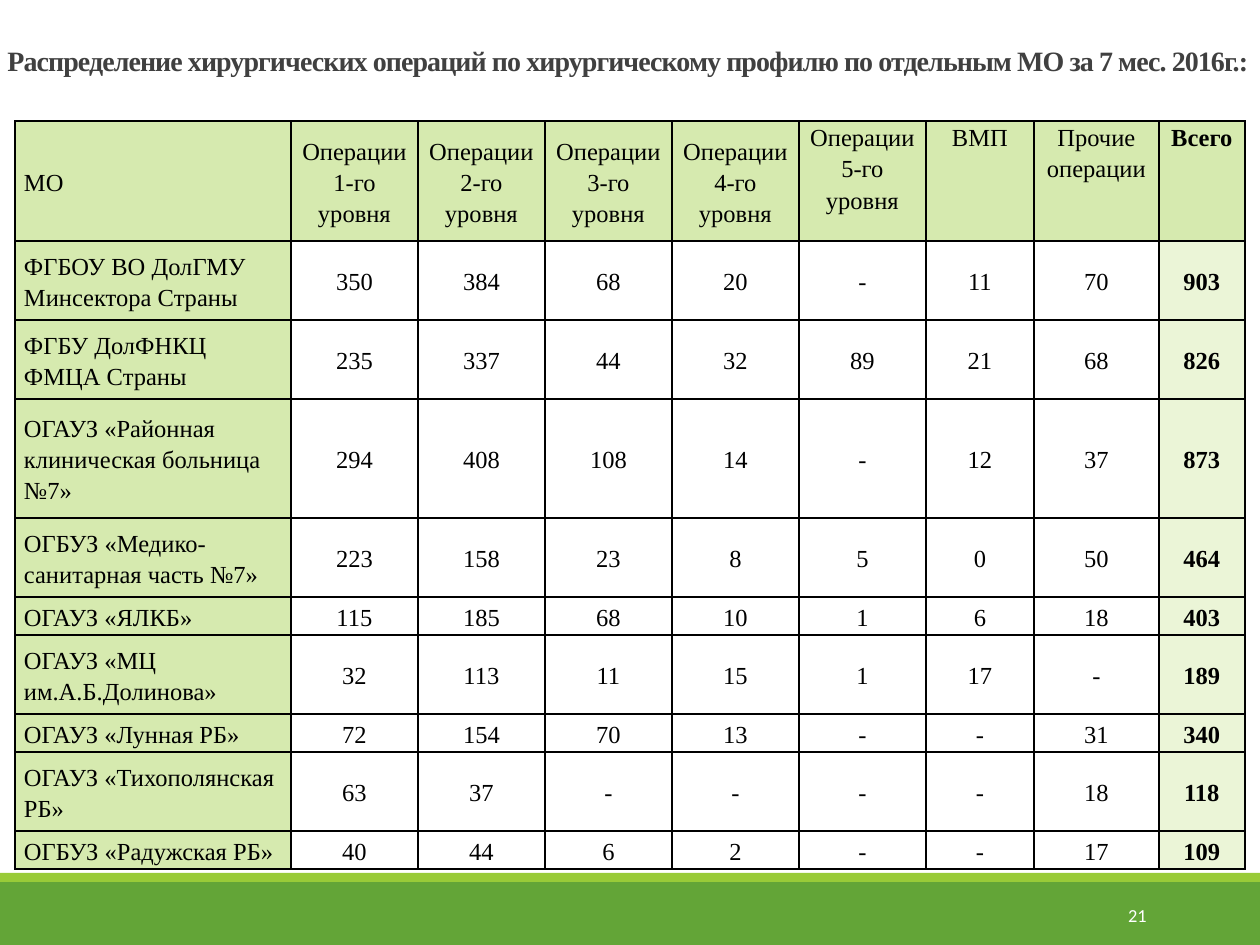
from lxml.etree import SubElement
from pptx import Presentation
from pptx.dml.color import RGBColor
from pptx.enum.shapes import MSO_SHAPE
from pptx.enum.text import MSO_ANCHOR, PP_ALIGN
from pptx.oxml import parse_xml
from pptx.oxml.ns import nsdecls, qn
from pptx.util import Emu, Pt

PX = 914400 // 126
SERIF = "Times New Roman"
COLORS = {
    "band": "63A537",
    "stripe": "99CB38",
    "label": "D6EAAF",
    "total": "EBF5D7",
    "title": "404040",
    "black": "000000",
    "white": "FFFFFF",
}
COLUMN_WIDTHS = [276] + [127] * 5 + [108, 125, 86]
ROW_HEIGHTS = [120, 79, 79, 119, 79, 38, 79, 38, 79, 38]
HEADERS = (["МО"] + [f"Операции {level}-го уровня" for level in range(1, 6)]
           + ["ВМП", "Прочие операции", "Всего"])
HOSPITALS = [
    ("ФГБОУ ВО ДолГМУ Минсектора Страны", "350 384 68 20 - 11 70 903"),
    ("ФГБУ ДолФНКЦ ФМЦА Страны", "235 337 44 32 89 21 68 826"),
    ("ОГАУЗ «Районная клиническая больница №7»", "294 408 108 14 - 12 37 873"),
    ("ОГБУЗ «Медико-санитарная часть №7»", "223 158 23 8 5 0 50 464"),
    ("ОГАУЗ «ЯЛКБ»", "115 185 68 10 1 6 18 403"),
    ("ОГАУЗ «МЦ им.А.Б.Долинова»", "32 113 11 15 1 17 - 189"),
    ("ОГАУЗ «Лунная РБ»", "72 154 70 13 - - 31 340"),
    ("ОГАУЗ «Тихополянская РБ»", "63 37 - - - - 18 118"),
    ("ОГБУЗ «Радужская РБ»", "40 44 6 2 - - 17 109"),
]


def px(value):
    return Emu(value * PX)


def color(name):
    return RGBColor.from_string(COLORS[name])


def add_run(paragraph, text, size, font, color_name, bold=False):
    run = paragraph.add_run()
    run.text = text
    run.font.size = Pt(size)
    run.font.name = font
    run.font.bold = bold
    run.font.color.rgb = color(color_name)
    return run


def add_bar(slide, top, height, color_name):
    shape = slide.shapes.add_shape(MSO_SHAPE.RECTANGLE, 0, px(top), px(1260), px(height))
    shape.shadow.inherit = False
    shape.fill.solid()
    shape.fill.fore_color.rgb = color(color_name)
    shape.line.fill.background()


def add_text(slide, left, top, width, height, text, size, font, color_name,
             align=PP_ALIGN.LEFT, bold=False):
    box = slide.shapes.add_textbox(px(left), px(top), px(width), px(height))
    frame = box.text_frame
    frame.word_wrap = True
    frame.vertical_anchor = MSO_ANCHOR.MIDDLE
    paragraph = frame.paragraphs[0]
    paragraph.alignment = align
    return add_run(paragraph, text, size, font, color_name, bold)


def add_borders(cell):
    properties = cell._tc.get_or_add_tcPr()
    for index, side in enumerate(("lnL", "lnR", "lnT", "lnB")):
        border = parse_xml(f'<a:{side} {nsdecls("a")} w="12700"/>')
        fill = SubElement(border, qn("a:solidFill"))
        SubElement(fill, qn("a:srgbClr"), val=COLORS["black"])
        properties.insert(index, border)


def fill_cell(cell, text, row, column):
    is_total = column == len(HEADERS) - 1
    cell.margin_left = cell.margin_right = px(9)
    cell.margin_top = cell.margin_bottom = 0
    # The last four headings sit at the top of their cells
    top_heading = row == 0 and column >= 5
    cell.vertical_anchor = MSO_ANCHOR.TOP if top_heading else MSO_ANCHOR.MIDDLE
    if row == 0 or column == 0:
        fill_name = "label"
    else:
        fill_name = "total" if is_total else None
    if fill_name:
        cell.fill.solid()
        cell.fill.fore_color.rgb = color(fill_name)
    else:
        cell.fill.background()
    paragraph = cell.text_frame.paragraphs[0]
    paragraph.alignment = PP_ALIGN.CENTER if column else PP_ALIGN.LEFT
    paragraph.line_spacing = 1.15
    add_run(paragraph, text, 14, SERIF, "black", is_total)
    add_borders(cell)


def add_operations_table(slide):
    rows = [HEADERS] + [[name] + counts.split() for name, counts in HOSPITALS]
    table = slide.shapes.add_table(
        len(rows), len(HEADERS), px(15), px(121),
        px(sum(COLUMN_WIDTHS)), px(sum(ROW_HEIGHTS))).table
    for column, width in zip(table.columns, COLUMN_WIDTHS):
        column.width = px(width)
    for row, height in zip(table.rows, ROW_HEIGHTS):
        row.height = px(height)
    for row, texts in enumerate(rows):
        for column, text in enumerate(texts):
            fill_cell(table.cell(row, column), text, row, column)


def main():
    presentation = Presentation()
    presentation.slide_width = px(1260)
    presentation.slide_height = px(945)
    slide = presentation.slides.add_slide(presentation.slide_layouts[6])

    # Footer bands
    add_bar(slide, 882, 63, "band")
    add_bar(slide, 873, 9, "stripe")

    # Title with tightened letters
    title = add_text(
        slide, -5, 38, 1309, 45,
        "Распределение хирургических операций по хирургическому профилю "
        "по отдельным МО за 7 мес. 2016г.:",
        16, SERIF, "title", bold=True)
    title.font._element.set("spc", "-50")

    add_operations_table(slide)

    # Slide number
    add_text(slide, 1023, 890, 136, 50, "21", 10.5, "Calibri", "white", PP_ALIGN.RIGHT)

    presentation.save("out.pptx")


if __name__ == "__main__":
    main()
